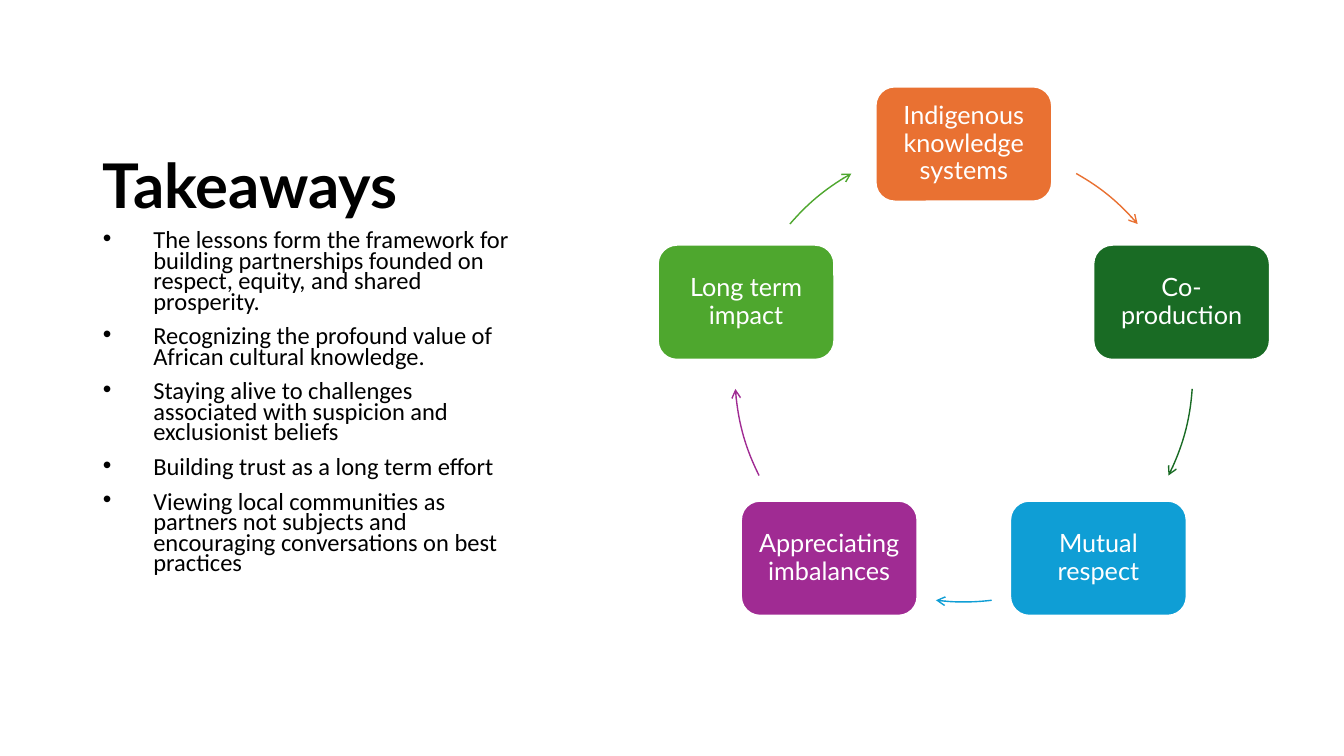
from math import cos, radians, sin

from lxml.etree import SubElement
from pptx import Presentation
from pptx.dml.color import RGBColor
from pptx.enum.shapes import MSO_SHAPE
from pptx.enum.text import MSO_ANCHOR, MSO_AUTO_SIZE, PP_ALIGN
from pptx.oxml.ns import qn
from pptx.util import Cm, Pt

BLACK = RGBColor(0x00, 0x00, 0x00)
WHITE = RGBColor(0xFF, 0xFF, 0xFF)
ORANGE = RGBColor(0xE9, 0x71, 0x32)
FOREST = RGBColor(0x19, 0x6B, 0x24)
BLUE = RGBColor(0x0F, 0x9E, 0xD5)
PURPLE = RGBColor(0xA0, 0x2B, 0x93)
GREEN = RGBColor(0x4E, 0xA7, 0x2E)

HUB_X, HUB_Y, RADIUS = 24.29, 9.4, 5.77
BOX_W, BOX_H = 4.45, 2.9

HEAD = {"name": "Lato", "size": Pt(44), "bold": True}
LIST = {"name": "Calibri", "size": Pt(17.5)}
LABEL = {"name": "Lato", "size": Pt(18)}

POINTS = [
    "The lessons form the framework for building partnerships founded on respect, equity, and shared prosperity.",
    "Recognizing the profound value of African cultural knowledge.",
    "Staying alive to challenges associated with suspicion and exclusionist beliefs",
    "Building trust as a long term effort",
    "Viewing local communities as partners not subjects and encouraging conversations on best practices",
]

STEPS = [
    ("Indigenous knowledge systems", ORANGE, 29.4, 49.4),
    ("Co-production", FOREST, 94, 116.6),
    ("Mutual respect", BLUE, 173, 187),
    ("Appreciating imbalances", PURPLE, 243.4, 266),
    ("Long term impact", GREEN, 310.6, 330.6),
]


def style(para, font, color, align, lead):
    """Format one paragraph."""
    para.alignment = align
    para.line_spacing = lead
    for key, value in font.items():
        setattr(para.font, key, value)
    para.font.color.rgb = color


def place(shape, left, top, width, height):
    """Move and size a placeholder, in centimetres."""
    sides = {"left": left, "top": top, "width": width, "height": height}
    for key, value in sides.items():
        setattr(shape, key, Cm(value))
    shape.text_frame.auto_size = MSO_AUTO_SIZE.NONE
    shape.text_frame.word_wrap = True


def add_title(slide, text):
    """Fill the title placeholder."""
    title = slide.shapes.title
    place(title, 2.34, 1.27, 10.92, 4.45)
    title.text_frame.text = text
    title.text_frame.vertical_anchor = MSO_ANCHOR.BOTTOM
    style(title.text_frame.paragraphs[0], HEAD, BLACK, PP_ALIGN.LEFT, 0.9)


def add_list(slide, points):
    """Fill the body placeholder with bullets."""
    body = slide.placeholders[1]
    place(body, 2.34, 5.72, 10.92, 10.59)
    frame = body.text_frame
    frame.text = "\n".join(points)
    frame.vertical_anchor = MSO_ANCHOR.TOP
    for rank, para in enumerate(frame.paragraphs):
        props = para._p.get_or_add_pPr()
        props.set("marL", str(Cm(1.27)))
        props.set("indent", str(Cm(-1.27)))
        SubElement(props, qn("a:buFont"), typeface="Arial")
        SubElement(props, qn("a:buChar"), char="•")
        para.space_before = Pt(10 if rank else 0)
        style(para, LIST, BLACK, PP_ALIGN.LEFT, 0.7)


def add_box(slide, text, color, angle):
    """Draw a labelled box on the ring, at a clockwise angle from the top."""
    mid_x = HUB_X + RADIUS * sin(radians(angle))
    mid_y = HUB_Y - RADIUS * cos(radians(angle))
    box = slide.shapes.add_shape(
        MSO_SHAPE.ROUNDED_RECTANGLE,
        Cm(mid_x - BOX_W / 2), Cm(mid_y - BOX_H / 2), Cm(BOX_W), Cm(BOX_H))
    box.shadow.inherit = False
    box.fill.solid()
    box.fill.fore_color.rgb = color
    box.line.color.rgb = WHITE
    box.line.width = Pt(1.5)
    frame = box.text_frame
    frame.word_wrap = True
    frame.vertical_anchor = MSO_ANCHOR.MIDDLE
    for side in ("left", "top", "right", "bottom"):
        setattr(frame, f"margin_{side}", Cm(0.18))
    frame.text = text
    style(frame.paragraphs[0], LABEL, WHITE, PP_ALIGN.CENTER, 0.9)


def add_arc(slide, color, start, end):
    """Draw an arrow along the ring between two clockwise angles."""
    arc = slide.shapes.add_shape(
        MSO_SHAPE.ARC, Cm(HUB_X - RADIUS), Cm(HUB_Y - RADIUS),
        Cm(2 * RADIUS), Cm(2 * RADIUS))
    for rank, angle in enumerate((start, end)):
        arc.adjustments[rank] = (angle - 90) % 360 * 0.6
    arc.shadow.inherit = False
    arc.fill.background()
    arc.line.color.rgb = color
    arc.line.width = Pt(1)
    SubElement(arc.element.spPr.find(qn("a:ln")), qn("a:tailEnd"), type="arrow")


def main():
    """Build and save the slide."""
    deck = Presentation()
    deck.slide_width, deck.slide_height = Cm(33.87), Cm(19.05)
    slide = deck.slides.add_slide(deck.slide_layouts[1])
    add_title(slide, "Takeaways")
    add_list(slide, POINTS)
    for rank, (text, color, start, end) in enumerate(STEPS):
        add_box(slide, text, color, rank * 360 / len(STEPS))
        add_arc(slide, color, start, end)
    deck.save("out.pptx")


if __name__ == "__main__":
    main()
